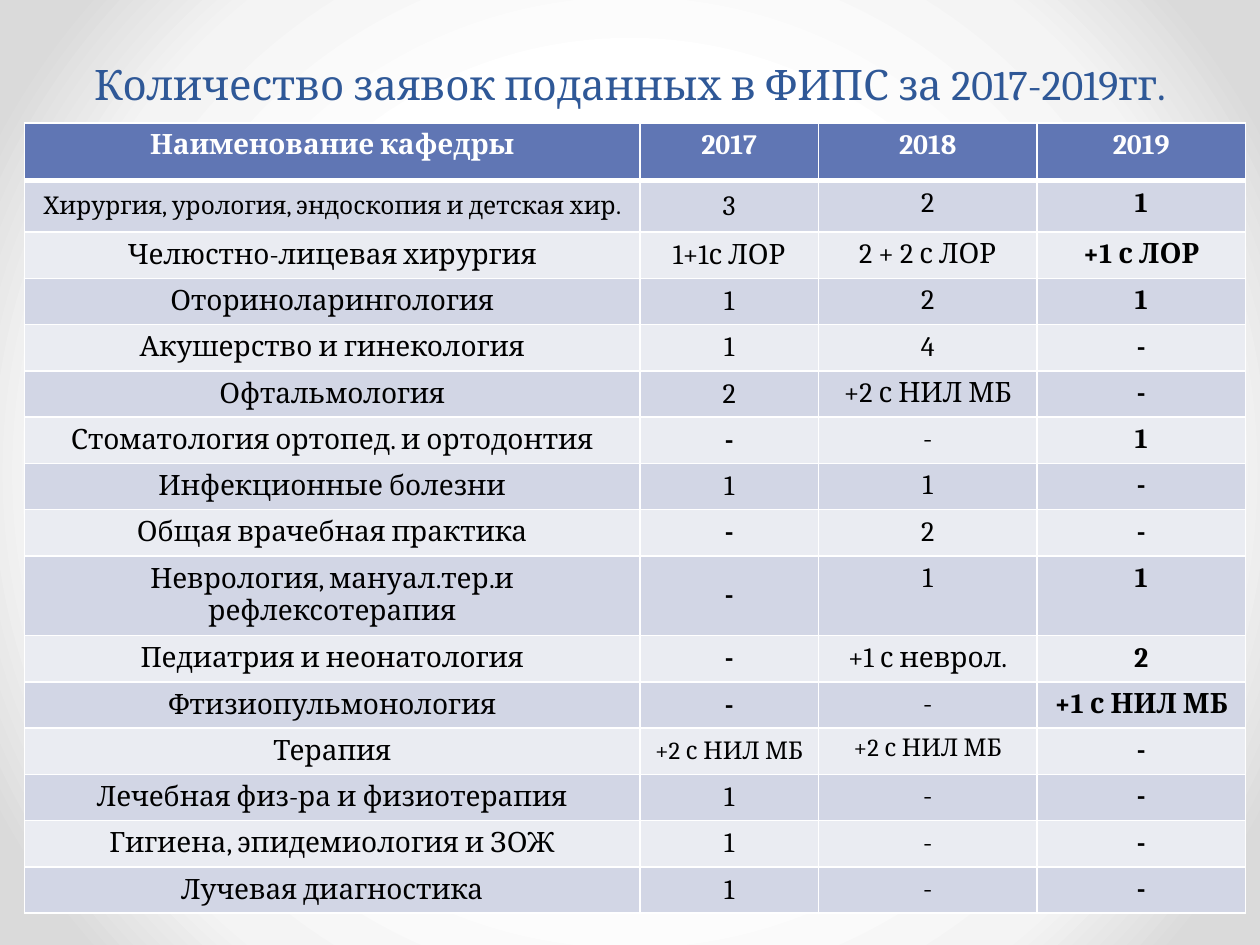
from pptx import Presentation
from pptx.dml.color import RGBColor
from pptx.enum.shapes import MSO_SHAPE
from pptx.enum.text import MSO_ANCHOR, PP_ALIGN
from pptx.oxml import parse_xml
from pptx.oxml.ns import nsdecls
from pptx.util import Pt

OVAL = MSO_SHAPE.OVAL
CENTER = PP_ALIGN.CENTER
TOP, MIDDLE, BOTTOM = MSO_ANCHOR.TOP, MSO_ANCHOR.MIDDLE, MSO_ANCHOR.BOTTOM


def color(value):
    return RGBColor.from_string(value)


def write(frame, text, size, value, bold=False):
    paragraph = frame.paragraphs[0]
    paragraph.alignment = CENTER
    run = paragraph.add_run()
    run.text = text
    run.font.name = "Cambria"
    run.font.size = Pt(size)
    run.font.bold = bold
    run.font.color.rgb = color(value)
    return paragraph


prs = Presentation()
prs.slide_width, prs.slide_height = Pt(720), Pt(540)
slide = prs.slides.add_slide(prs.slide_layouts[6])

stops = "".join(
    f'<a:gs pos="{position}000"><a:srgbClr val="{shade}"/></a:gs>'
    for position, shade in [(50, "FFFFFF"), (76, "F4F4F4"), (92, "DADADA")]
)
slide.element.cSld.insert(0, parse_xml(
    f'<p:bg {nsdecls("p", "a")}><p:bgPr><a:gradFill rotWithShape="1"><a:gsLst>{stops}</a:gsLst>'
    '<a:path path="circle"><a:fillToRect l="50000" t="50000" r="50000" b="50000"/></a:path>'
    '</a:gradFill><a:effectLst/></p:bgPr></p:bg>'
))

for dot_left in (666, 44.8):
    dot = slide.shapes.add_shape(OVAL, Pt(dot_left), Pt(511.8), Pt(6.6), Pt(6.6))
    dot.shadow.inherit = False
    dot.fill.solid()
    dot.fill.fore_color.rgb = color("808080")
    dot.line.fill.background()

title = slide.shapes.add_textbox(Pt(36), Pt(0), Pt(648), Pt(66)).text_frame
title.word_wrap = True
title.vertical_anchor = BOTTOM
heading = write(title, "Количество заявок поданных в ФИПС за 2017-2019гг.", 24, "2F5897")
heading.line_spacing = Pt(58)

applications = [
    ("Наименование кафедры", "2017", "2018", "2019"),
    ("Хирургия, урология, эндоскопия и детская хир.", "3", "2", "1"),
    ("Челюстно-лицевая хирургия", "1+1с ЛОР", "2 + 2 с ЛОР", "+1 с ЛОР"),
    ("Оториноларингология", "1", "2", "1"),
    ("Акушерство и гинекология", "1", "4", "-"),
    ("Офтальмология", "2", "+2 с НИЛ МБ", "-"),
    ("Стоматология ортопед. и ортодонтия", "-", "-", "1"),
    ("Инфекционные болезни", "1", "1", "-"),
    ("Общая врачебная практика", "-", "2", "-"),
    ("Неврология, мануал.тер.и рефлексотерапия", "-", "1", "1"),
    ("Педиатрия и неонатология", "-", "+1 с неврол.", "2"),
    ("Фтизиопульмонология", "-", "-", "+1 с НИЛ МБ"),
    ("Терапия", "+2 с НИЛ МБ", "+2 с НИЛ МБ", "-"),
    ("Лечебная физ-ра и физиотерапия", "1", "-", "-"),
    ("Гигиена, эпидемиология и ЗОЖ", "1", "-", "-"),
    ("Лучевая диагностика", "1", "-", "-"),
]
column_widths = [351.6, 102, 125, 119]
row_heights = [33, 29.5] + [25.7] * 14
row_heights[9] = 44
small_cells = {(1, 0), (12, 1), (12, 2)}

table = slide.shapes.add_table(
    len(applications), len(column_widths),
    Pt(14.1), Pt(70.2), Pt(sum(column_widths)), Pt(sum(row_heights)),
).table
for column, width in zip(table.columns, column_widths):
    column.width = Pt(width)

for r, (department, height) in enumerate(zip(applications, row_heights)):
    table.rows[r].height = Pt(height)
    header = r == 0
    band = "6076B4" if header else ("EAECF2", "D2D6E5")[r % 2]
    borders = {"L": 1, "R": 1, "T": 3 if r == 1 else 1, "B": 3 if header else 1}
    for c, text in enumerate(department):
        cell = table.cell(r, c)
        cell.vertical_anchor = MIDDLE if c < 2 and not header else TOP
        cell.fill.solid()
        cell.fill.fore_color.rgb = color(band)
        bold = header or c == 3 or (c == 1 and text == "-")
        size = 14 if (r, c) in small_cells else 16
        write(cell.text_frame, text, size, "FFFFFF" if header else "000000", bold)
        properties = cell._tc.get_or_add_tcPr()
        for order, (side, weight) in enumerate(borders.items()):
            properties.insert(order, parse_xml(
                f'<a:ln{side} {nsdecls("a")} w="{Pt(weight)}"><a:solidFill>'
                f'<a:srgbClr val="FFFFFF"/></a:solidFill></a:ln{side}>'
            ))

prs.save("out.pptx")
